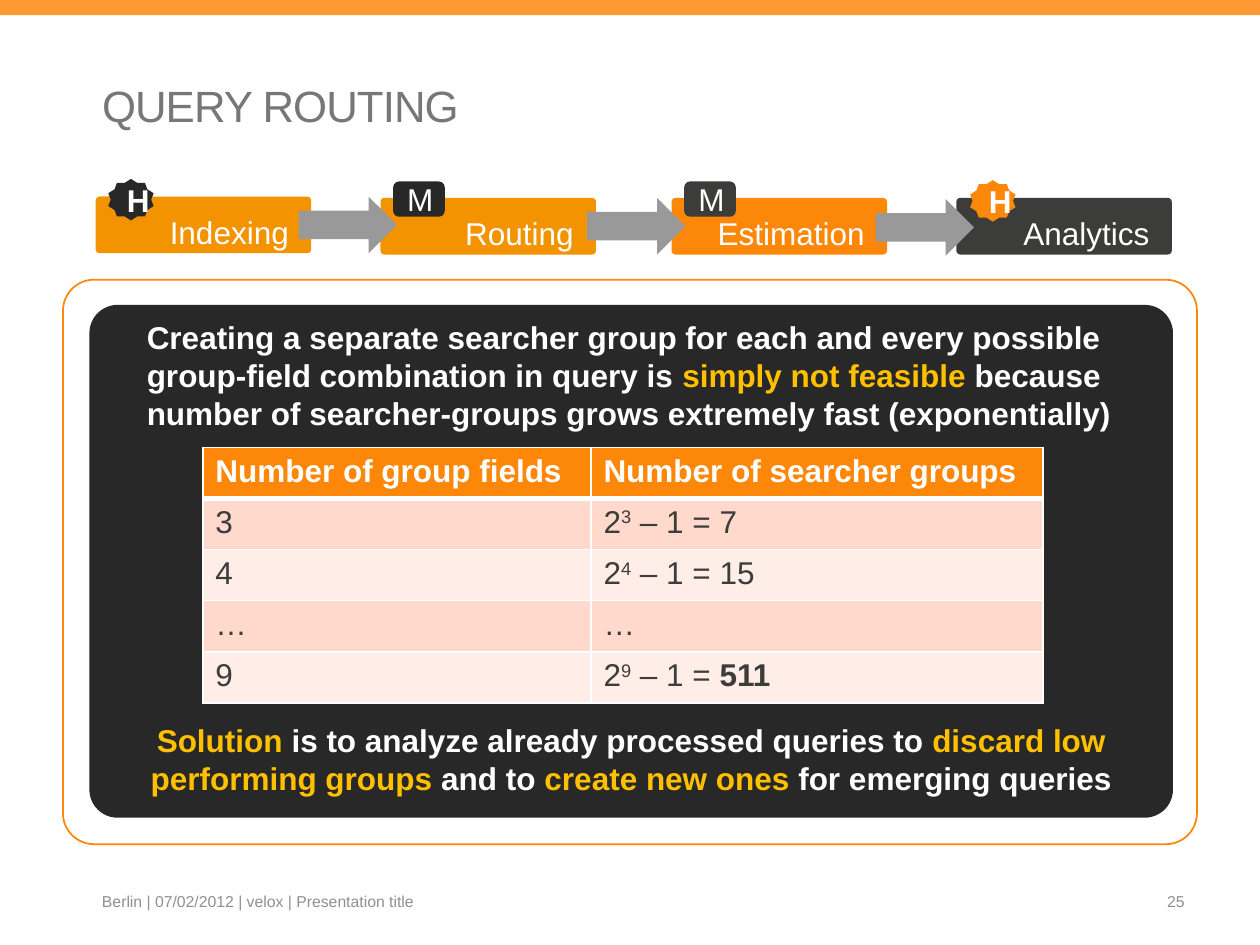
"""Build the query routing slide with its pipeline, table and conclusion."""
from lxml.etree import SubElement
from pptx import Presentation
from pptx.dml.color import RGBColor
from pptx.enum.shapes import MSO_SHAPE as Shape
from pptx.enum.text import MSO_ANCHOR as Anchor, MSO_AUTO_SIZE as AutoSize, PP_ALIGN as Align
from pptx.oxml.ns import qn
from pptx.util import Inches, Pt

WHITE = RGBColor(0xFF, 0xFF, 0xFF)
BAND = RGBColor(0xFF, 0x99, 0x33)
ORANGE = RGBColor(0xFD, 0x87, 0x09)
AMBER = RGBColor(0xF3, 0x93, 0x00)
GOLD = RGBColor(0xFF, 0xC0, 0x00)
BLACK = RGBColor(0x28, 0x28, 0x28)
CHARCOAL = RGBColor(0x3C, 0x3C, 0x3B)
ARROW_GRAY = RGBColor(0x99, 0x99, 0x99)
TITLE_GRAY = RGBColor(0x76, 0x77, 0x76)
FOOTER_GRAY = RGBColor(0x8F, 0x91, 0x8E)
ROW_DARK = RGBColor(0xFE, 0xD9, 0xCC)
ROW_LIGHT = RGBColor(0xFF, 0xED, 0xE7)


def write(frame, text, size=18, color=WHITE, bold=False, align=Align.LEFT,
          anchor=Anchor.MIDDLE, insets=None, spacing=None, tracking=None):
    """Fill a text frame with a string or with (text, overrides) pieces."""
    frame.word_wrap = True
    frame.vertical_anchor = anchor
    if insets:
        (frame.margin_left, frame.margin_top,
         frame.margin_right, frame.margin_bottom) = map(Inches, insets)
    paragraph = frame.paragraphs[0]
    paragraph.alignment = align
    if spacing:
        paragraph.line_spacing = Pt(spacing)
    for words, change in [(text, {})] if isinstance(text, str) else text:
        run = paragraph.add_run()
        run.text = words
        run.font.name = "Arial"
        run.font.size = Pt(size)
        run.font.bold = change.get("bold", bold)
        run.font.color.rgb = change.get("color", color)
        properties = run.font._element
        if change.get("raised"):
            properties.set("baseline", "30000")
        if tracking:
            properties.set("spc", str(round(tracking * 100)))


class Deck:
    """Hold the current slide and place elements on a 100 by 75 grid."""

    def __init__(self):
        self.file = Presentation()
        self.file.slide_width, self.file.slide_height = Inches(10), Inches(7.5)
        self.slide = self.file.slides.add_slide(self.file.slide_layouts[5])
        self.cell = self.file.slide_width // 100

    def area(self, *box):
        """Turn grid columns and rows into slide lengths."""
        return [round(units * self.cell) for units in box]

    def title(self, text, box, **style):
        """Place and format the title placeholder."""
        title = self.slide.shapes.title
        title.left, title.top, title.width, title.height = self.area(*box)
        title.text_frame.auto_size = AutoSize.NONE
        write(title.text_frame, text, **style)

    def shape(self, kind, box, fill=None, outline=None, corner=None, text=None, **style):
        """Add a flat preset shape, with text if any."""
        shape = self.slide.shapes.add_shape(kind, *self.area(*box))
        shape.shadow.inherit = False
        if corner is not None:
            shape.adjustments[0] = corner
        if fill is None:
            shape.fill.background()
        else:
            shape.fill.solid()
            shape.fill.fore_color.rgb = fill
        if outline is None:
            shape.line.fill.background()
        else:
            shape.line.color.rgb = outline
            shape.line.width = Pt(1)
        if text:
            write(shape.text_frame, text, **style)

    def label(self, text, box, **style):
        """Add a text box."""
        write(self.slide.shapes.add_textbox(*self.area(*box)).text_frame, text, **style)

    def table(self, rows, corner, widths, row_height):
        """Add a table with a header and alternating rows."""
        size = sum(widths), row_height * len(rows)
        grid = self.slide.shapes.add_table(
            len(rows), len(widths), *self.area(*corner, *size)).table
        for column, width in zip(grid.columns, self.area(*widths)):
            column.width = width
        for index, row in enumerate(rows):
            header = index == 0
            fill = ORANGE if header else (ROW_LIGHT, ROW_DARK)[index % 2]
            for column, text in enumerate(row):
                cell = grid.cell(index, column)
                self.borders(cell, {"T": 3 if index == 1 else 1, "B": 3 if header else 1})
                cell.fill.solid()
                cell.fill.fore_color.rgb = fill
                write(cell.text_frame, text, bold=header, anchor=Anchor.TOP,
                      color=WHITE if header else CHARCOAL)

    def borders(self, cell, weights):
        """Draw the white borders of a cell."""
        properties = cell._tc.get_or_add_tcPr()
        for side in "LRTB":
            line = SubElement(properties, qn(f"a:ln{side}"), w=str(Pt(weights.get(side, 1))))
            paint = SubElement(line, qn("a:solidFill"))
            SubElement(paint, qn("a:srgbClr"), val=str(WHITE))


def power(exponent, result, bold=False):
    """Return the pieces of the searcher group formula."""
    return [("2", {}), (exponent, {"raised": True}), (" – 1 = ", {}), (result, {"bold": bold})]


def main():
    """Compose and save the slide."""
    deck = Deck()
    gold = {"color": GOLD}
    deck.shape(Shape.RECTANGLE, (0, 0, 100, 1.2), BAND)
    deck.shape(Shape.ROUNDED_RECTANGLE, (5, 22.2, 90, 44.8), outline=ORANGE, corner=0.055)
    deck.title("QUERY ROUTING", (5, 6.3, 70.9, 15.9), size=25, color=TITLE_GRAY,
               anchor=Anchor.TOP, insets=(0.31, 0.05, 0.1, 0.05), spacing=26, tracking=-0.5)

    stages = [("Indexing ", 7.6, 15.6, AMBER), ("Routing ", 30.2, 15.7, AMBER),
              ("Estimation ", 53.3, 15.7, ORANGE), ("Analytics ", 75.9, 15.7, CHARCOAL)]
    for stage, left, top, fill in stages:
        deck.shape(Shape.ROUNDED_RECTANGLE, (left, top, 17.1, 4.5), fill, corner=0.069,
                   text=stage, align=Align.RIGHT, insets=(0.1, 0.16, 0.1, 0.05))
    for left, top in [(23.7, 15.6), (46.6, 15.7), (69.5, 15.8)]:
        deck.shape(Shape.RIGHT_ARROW, (left, top, 7.8, 4.5), ARROW_GRAY)
    for left, fill in [(31.2, BLACK), (54.3, CHARCOAL)]:
        deck.shape(Shape.ROUNDED_RECTANGLE, (left, 14.4, 4.1, 2.8), fill,
                   text="M", align=Align.CENTER)
    for left, top, fill in [(8.6, 14.2, BLACK), (77, 14.3, ORANGE)]:
        deck.shape(Shape.STAR_10_POINT, (left, top, 3.6, 3.3), fill,
                   text="H", bold=True, align=Align.CENTER)

    problem = [("Creating a separate searcher group for each and every possible "
                "group-field combination in query is ", {}),
               ("simply not feasible", gold),
               (" because number of searcher-groups grows extremely fast (exponentially)", {})]
    deck.shape(Shape.ROUNDED_RECTANGLE, (7.1, 24.2, 86, 40.7), BLACK, corner=0.055,
               text=problem, bold=True, anchor=Anchor.TOP, insets=(0.39, 0.04, 0.39, 0.04))
    deck.table([("Number of group fields", "Number of searcher groups"),
                ("3", power("3", "7")),
                ("4", power("4", "15")),
                ("…", "…"),
                ("9", power("9", "511", bold=True))],
               (16.1, 35.5), (30.8, 35.9), 4.06)
    solution = [("Solution ", gold), ("is to analyze already processed queries to ", {}),
                ("discard low performing groups", gold), (" and to ", {}),
                ("create new ones", gold), (" for emerging queries", {})]
    deck.label(solution, (7.1, 56.7, 86, 7.1), bold=True, align=Align.CENTER,
               insets=(0.02, 0.05, 0.02, 0.05))

    deck.label("Berlin | 07/02/2012 | velox | Presentation title", (8.1, 69.5, 31.7, 4),
               size=9, color=FOOTER_GRAY, insets=(0, 0.05, 0.1, 0.05))
    deck.label("25", (71.7, 69.5, 23.3, 4), size=9, color=FOOTER_GRAY, align=Align.RIGHT)
    deck.file.save("out.pptx")


if __name__ == "__main__":
    main()
